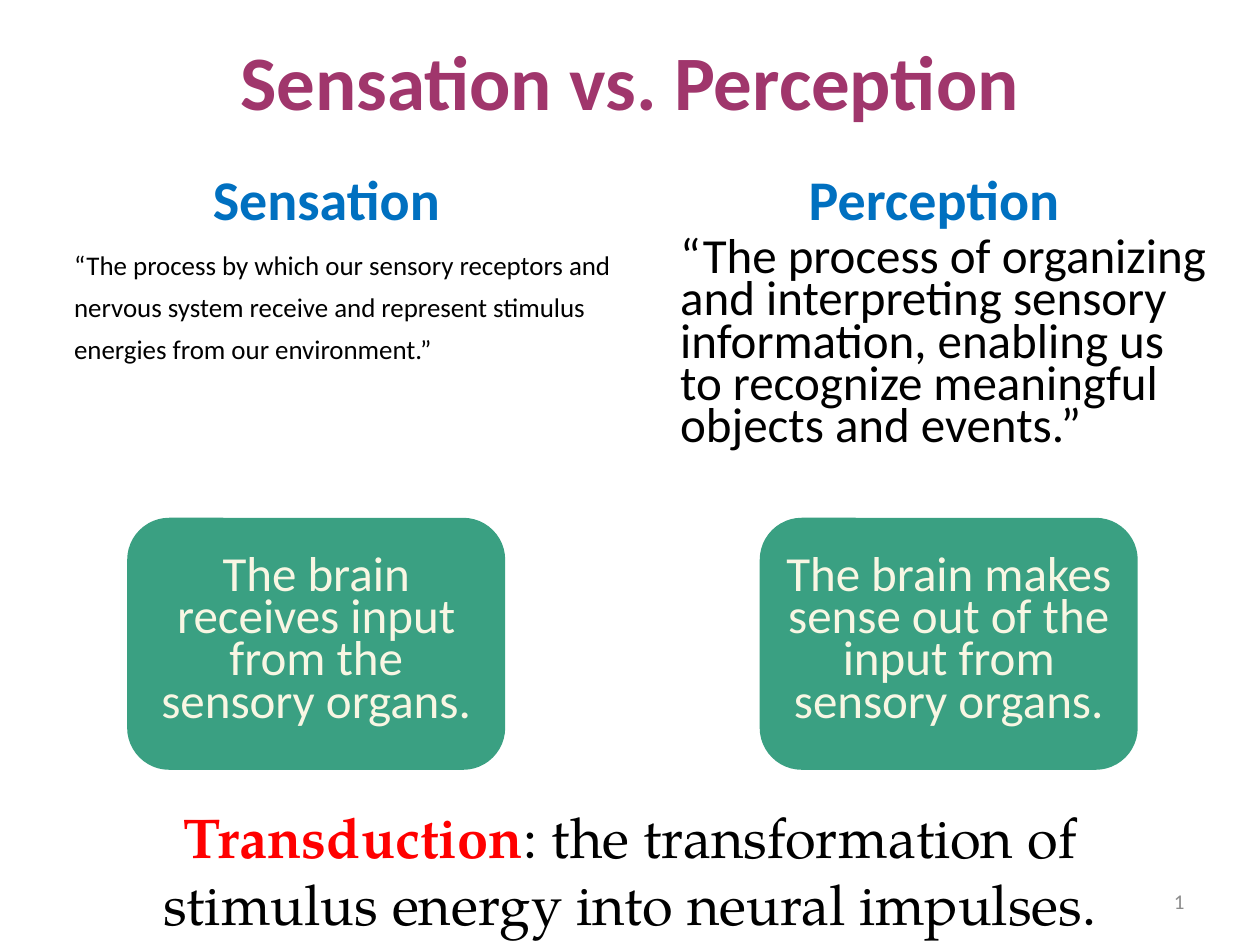
from lxml import etree
from pptx import Presentation
from pptx import util as u
from pptx.dml.color import RGBColor
from pptx.enum import shapes, text
from pptx.oxml.ns import qn

SANS = "Calibri"
SERIF = "TeX Gyre Pagella"
COLUMNS = [
    {
        "heading": ("Sensation", (1.59, 1.26, 2.11, 0.64)),
        "definition": (
            "“The process by which our sensory receptors and nervous system "
            "receive and represent stimulus energies from our environment.”",
            (0.49, 1.85, 4.63, 1.81), 15.4),
        "summary": ("The brain receives input from the sensory organs.", 1.01),
    },
    {
        "heading": ("Perception", (6.32, 1.26, 2.42, 0.64)),
        "definition": (
            "“The process of organizing and interpreting sensory information, "
            "enabling us to recognize meaningful objects and events.”",
            (5.3, 1.87, 4.45, 1.97), 28),
        "summary": ("The brain makes sense out of the input from sensory organs.", 6.03),
    },
]


def color(value):
    """Turn a hex string into a colour."""
    return RGBColor.from_string(value)


def inches(place):
    """Turn left, top, width and height into lengths."""
    return [u.Inches(length) for length in place]


def style(para, size, hue, bold=False, align="LEFT", spacing=None, name=SANS):
    """Format a whole paragraph."""
    para.font.name = name
    para.font.size = u.Pt(size)
    para.font.bold = bold
    para.font.color.rgb = color(hue)
    para.alignment = getattr(text.PP_ALIGN, align)
    if spacing:
        para.line_spacing = u.Pt(spacing)


def add_text(page, place, words, size, hue, **options):
    """Add a wrapping text box and return it."""
    box = page.shapes.add_textbox(*inches(place))
    box.text_frame.word_wrap = True
    para = box.text_frame.paragraphs[0]
    para.text = words
    style(para, size, hue, **options)
    return box


def add_title(page, words):
    """Place and format the title placeholder."""
    title = page.shapes.title
    title.left, title.top, title.width, title.height = inches((0.5, 0.01, 9, 1.25))
    title.text_frame.text = words
    title.text_frame.vertical_anchor = text.MSO_ANCHOR.MIDDLE
    style(title.text_frame.paragraphs[0], 44, "A0366C", bold=True, align="CENTER")


def add_summary(page, words, left):
    """Add a green rounded box with centred text."""
    box = page.shapes.add_shape(
        shapes.MSO_SHAPE.ROUNDED_RECTANGLE, *inches((left, 4.11, 3, 2)))
    box.shadow.inherit = False
    box.fill.solid()
    box.fill.fore_color.rgb = color("3AA082")
    box.line.fill.background()
    box.text_frame.word_wrap = True
    box.text_frame.vertical_anchor = text.MSO_ANCHOR.MIDDLE
    para = box.text_frame.paragraphs[0]
    para.text = words
    style(para, 28, "F8F6E3", align="CENTER", spacing=24)


def add_column(page, heading, definition, summary):
    """Add the heading, definition and summary of one concept."""
    words, place = heading
    add_text(page, place, words, 32, "0070C0", bold=True)
    words, place, size = definition
    add_text(page, place, words, size, "000000", spacing=24)
    add_summary(page, *summary)


def add_transduction(page):
    """Add the closing definition with its highlighted term."""
    box = add_text(page, (1.01, 6.32, 7.99, 1.18), "Transduction", 32, "000000",
                   align="CENTER", name=SERIF)
    para = box.text_frame.paragraphs[0]
    term = para.runs[0]
    term.font.bold = True
    term.font.color.rgb = color("FF0000")
    span = para.add_run()
    span.text = ": the transformation of stimulus energy into neural impulses."


def add_slide_number(page):
    """Add the slide number as a live field."""
    box = add_text(page, (7.17, 6.95, 2.33, 0.4), "", 12, "8C8C8C", align="RIGHT")
    box.text_frame.vertical_anchor = text.MSO_ANCHOR.MIDDLE
    field = etree.SubElement(
        box.text_frame.paragraphs[0]._p, qn("a:fld"),
        id="{B6F15528-21DE-4FAA-801E-634DDDAF4B2B}", type="slidenum")
    etree.SubElement(field, qn("a:rPr"), lang="en-US")
    etree.SubElement(field, qn("a:t")).text = "1"


def main():
    """Build the slide and save it."""
    deck = Presentation()
    deck.slide_width, deck.slide_height = u.Inches(10), u.Inches(7.5)
    page = deck.slides.add_slide(deck.slide_layouts[5])
    add_title(page, "Sensation vs. Perception")
    for column in COLUMNS:
        add_column(page, **column)
    add_slide_number(page)
    add_transduction(page)
    deck.save("out.pptx")


if __name__ == "__main__":
    main()
